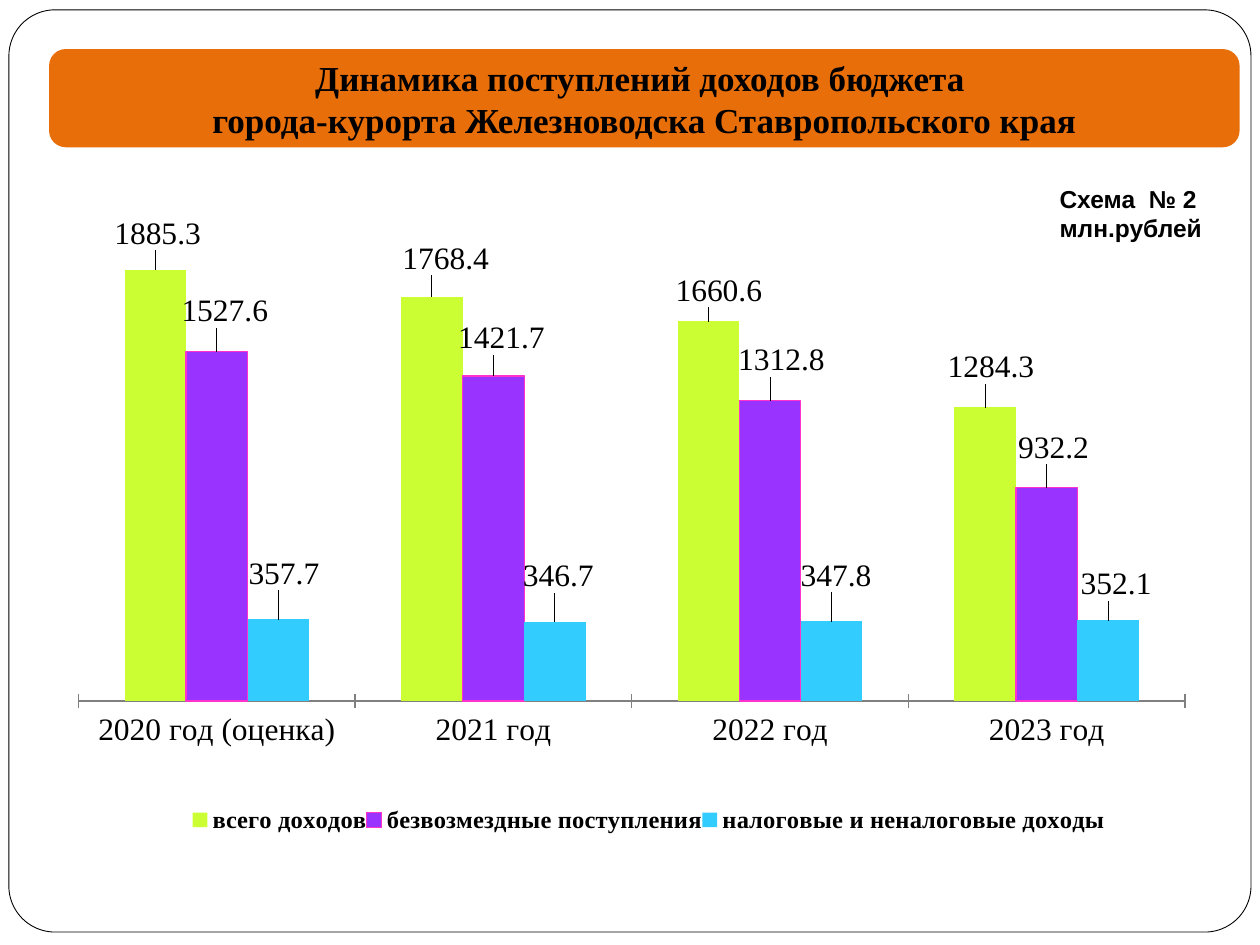
from lxml import etree
from pptx import Presentation
from pptx.chart.data import CategoryChartData
from pptx.dml.color import RGBColor
from pptx.enum.chart import (XL_CHART_TYPE, XL_LABEL_POSITION, XL_LEGEND_POSITION,
                             XL_TICK_LABEL_POSITION, XL_TICK_MARK)
from pptx.enum.shapes import MSO_SHAPE
from pptx.enum.text import MSO_ANCHOR, PP_ALIGN
from pptx.oxml.ns import qn
from pptx.util import Cm, Pt

ROUNDED = MSO_SHAPE.ROUNDED_RECTANGLE
COLUMNS = XL_CHART_TYPE.COLUMN_CLUSTERED
OUTSIDE_END = XL_LABEL_POSITION.OUTSIDE_END
LEGEND_BOTTOM = XL_LEGEND_POSITION.BOTTOM
TICK_CROSS = XL_TICK_MARK.CROSS
TICK_NONE = XL_TICK_MARK.NONE
LABELS_LOW = XL_TICK_LABEL_POSITION.LOW
MIDDLE = MSO_ANCHOR.MIDDLE
CENTER = PP_ALIGN.CENTER

COLORS = {
    "paper": "FFFFFF", "ink": "000000", "banner": "E86E0A", "axis": "808080",
    "total": "CCFF33", "grants": "9933FF", "grants_edge": "FF33CC", "taxes": "33CCFF",
}
SERIF = "Times New Roman"
YEARS = ["2020 год (оценка)", "2021 год", "2022 год", "2023 год"]
# name, values, fill, edge, label shifts (percent of chart width and height)
INCOME = [
    ("всего доходов", [1885.3, 1768.4, 1660.6, 1284.3], "total", None,
     [(0.2, -2.2), (1.2, -2.4), (0.9, -1.3), (0.5, -2.8)]),
    ("безвозмездные поступления", [1527.6, 1421.7, 1312.8, 932.2], "grants", "grants_edge",
     [(0.7, -2.8), (0.7, -2.4), (1, -2.8), (0.6, -2.8)]),
    ("налоговые и неналоговые доходы", [357.7, 346.7, 347.8, 352.1], "taxes", None,
     [(0.5, -3.6), (0.3, -3.6), (0.4, -3.6), (0.7, -2.2)]),
]


def color(name):
    return RGBColor.from_string(COLORS[name])


def style_font(font, size, bold=False, face=SERIF):
    font.name, font.size, font.bold = face, Pt(size), bold
    font.color.rgb = color("ink")


def add_panel(page, place, corner, fill, edge=None):
    panel = page.shapes.add_shape(ROUNDED, *map(Cm, place))
    panel.shadow.inherit = False
    panel.adjustments[0] = corner
    panel.fill.solid()
    panel.fill.fore_color.rgb = color(fill)
    if edge:
        panel.line.color.rgb = color(edge)
        panel.line.width = Pt(0.5)
    else:
        panel.line.fill.background()


def place_title(page, place, text):
    """Put the title placeholder in front of its banner."""
    title = page.shapes.title
    title.left, title.top, title.width, title.height = map(Cm, place)
    page.shapes.element.append(title.element)
    frame = title.text_frame
    frame.text = text
    frame.word_wrap = True
    frame.vertical_anchor = MIDDLE
    para = frame.paragraphs[0]
    para.alignment = CENTER
    for span in para.runs:
        style_font(span.font, 20, bold=True)


def add_note(page, place, text):
    frame = page.shapes.add_textbox(*map(Cm, place)).text_frame
    frame.word_wrap = True
    frame.text = text
    for para in frame.paragraphs:
        for span in para.runs:
            style_font(span.font, 14, bold=True, face="Arial")


def make_layout(**settings):
    """Build a c:layout element whose manual settings follow the given order."""
    layout = etree.Element(qn("c:layout"))
    manual = etree.SubElement(layout, qn("c:manualLayout"))
    for name, value in settings.items():
        etree.SubElement(manual, qn(f"c:{name}")).set("val", str(value))
    return layout


def set_layout(parent, index, layout):
    for old in parent.findall(qn("c:layout")):
        parent.remove(old)
    parent.insert(index, layout)


def style_series(series, fill, edge):
    series.format.fill.solid()
    series.format.fill.fore_color.rgb = color(fill)
    if edge:
        series.format.line.color.rgb = color(edge)
        series.format.line.width = Pt(0.75)
    labels = series.data_labels
    labels.show_value = True
    labels.number_format = "0.0"
    labels.number_format_is_linked = False
    labels.position = OUTSIDE_END
    for index in range(len(YEARS)):
        series.points[index].data_label.position = OUTSIDE_END


def style_axes(chart):
    years = chart.category_axis
    years.major_tick_mark = TICK_CROSS
    years.tick_label_position = LABELS_LOW
    years.format.line.color.rgb = color("axis")
    amounts = chart.value_axis
    amounts.visible = False
    amounts.has_major_gridlines = False
    amounts.major_tick_mark = TICK_NONE
    amounts.minimum_scale, amounts.maximum_scale = 0, 2050


def add_income_chart(page, place):
    data = CategoryChartData(number_format="0.0")
    data.categories = YEARS
    for name, values, *_ in INCOME:
        data.add_series(name, values)
    chart = page.shapes.add_chart(COLUMNS, *map(Cm, place), data).chart
    chart.has_title = False
    style_font(chart.font, 18)
    style_axes(chart)

    plot = chart.plots[0]
    plot.vary_by_categories = False
    plot.gap_width, plot.overlap = 150, 0
    for series, (_, _, fill, edge, _) in zip(plot.series, INCOME):
        style_series(series, fill, edge)
    shifts = [shift for *_, row in INCOME for shift in row]
    for label, (right, down) in zip(chart.element.iter(qn("c:dLbl")), shifts):
        set_layout(label, 1, make_layout(x=right / 100, y=down / 100))

    chart.has_legend = True
    chart.legend.position = LEGEND_BOTTOM
    chart.legend.include_in_layout = False
    style_font(chart.legend.font, 14, bold=True)
    set_layout(chart.element.find(".//" + qn("c:legend")), 1, make_layout(
        xMode="edge", yMode="edge", x=0.1, y=0.82, w=0.8, h=0.16))
    set_layout(chart.element.find(".//" + qn("c:plotArea")), 0, make_layout(
        layoutTarget="inner", xMode="edge", yMode="edge", x=0, y=0.01, w=0.97, h=0.71))


def main():
    deck = Presentation()
    deck.slide_width, deck.slide_height = Cm(25.4), Cm(19.05)
    page = deck.slides.add_slide(deck.slide_layouts[5])
    banner = (0.99, 0.99, 24, 1.98)
    add_panel(page, (0.18, 0.2, 25.04, 18.59), 0.05, "paper", "ink")
    add_note(page, (21.11, 3.58, 3.45, 1.45), "Схема  № 2\nмлн.рублей")
    add_panel(page, banner, 0.17, "banner")
    place_title(page, banner, "Динамика поступлений доходов бюджета \v"
                              "города-курорта Железноводска Ставропольского края")
    add_income_chart(page, (1.57, 4.37, 23.01, 13.49))
    deck.save("out.pptx")


if __name__ == "__main__":
    main()
